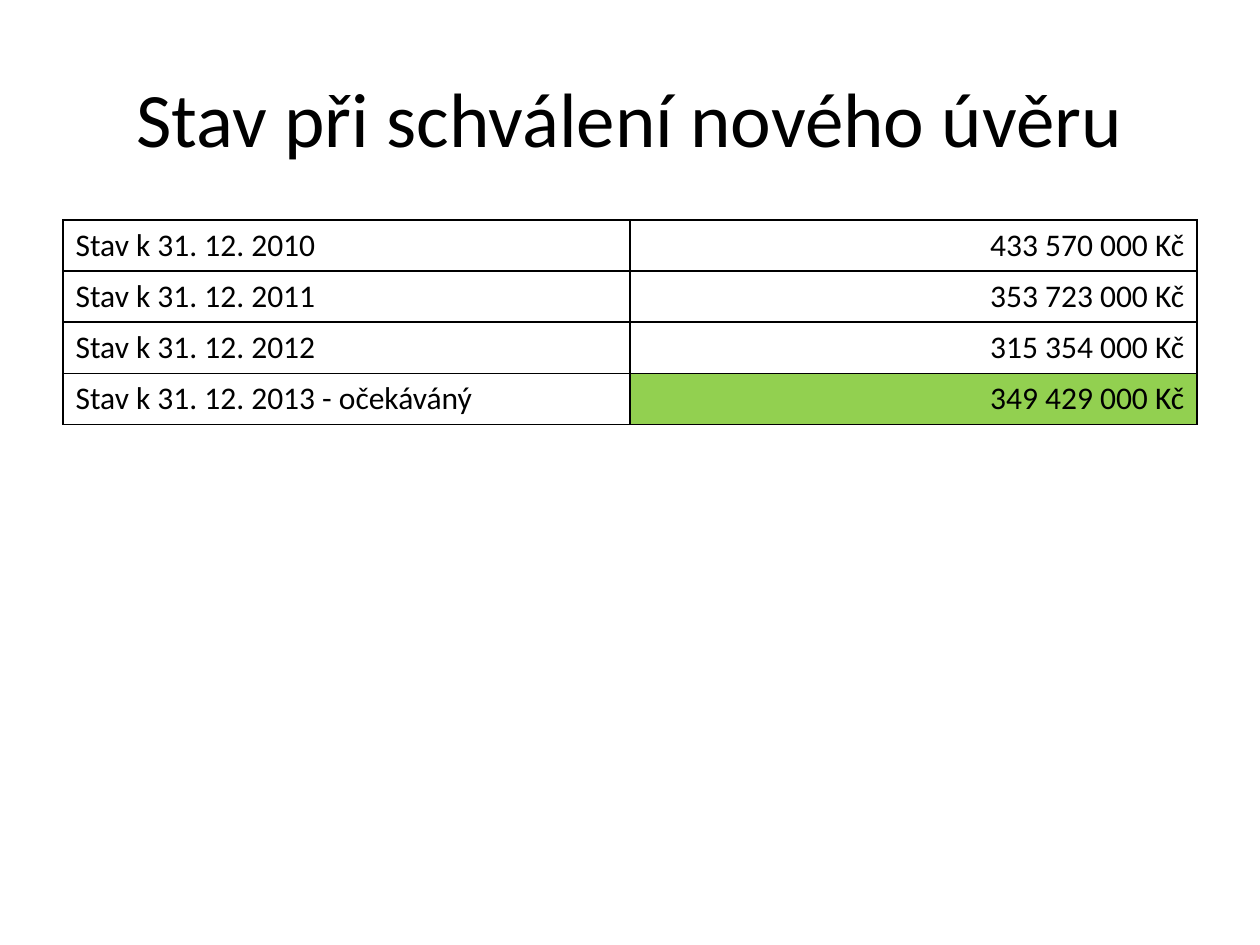
from lxml.etree import SubElement
from pptx import Presentation
from pptx.dml.color import RGBColor
from pptx.enum.text import MSO_ANCHOR, PP_ALIGN
from pptx.oxml.ns import qn
from pptx.util import Emu, Pt

PX = 914400 // 126
BLACK = RGBColor(0x00, 0x00, 0x00)
GREEN = RGBColor(0x92, 0xD0, 0x50)
FONT = "Calibri"

BALANCES = [
    ("Stav k 31. 12. 2010", "433 570 000 Kč"),
    ("Stav k 31. 12. 2011", "353 723 000 Kč"),
    ("Stav k 31. 12. 2012", "315 354 000 Kč"),
    ("Stav k 31. 12. 2013 - očekáváný", "349 429 000 Kč"),
]


def px(n):
    return Emu(n * PX)


def write_text(tf, text, size=18, color=BLACK, align=PP_ALIGN.LEFT):
    p = tf.paragraphs[0]
    p.alignment = align
    r = p.add_run()
    r.text = text
    r.font.name = FONT
    r.font.size = Pt(size)
    r.font.color.rgb = color


def set_borders(cell, color=BLACK, width=1):
    """Draw all four cell borders; call before the fill is set."""
    tc_pr = cell._tc.get_or_add_tcPr()
    for side in ("a:lnL", "a:lnR", "a:lnT", "a:lnB"):
        ln = SubElement(tc_pr, qn(side), w=str(Pt(width)))
        fill = SubElement(ln, qn("a:solidFill"))
        SubElement(fill, qn("a:srgbClr"), val=str(color))


def add_title(s, text):
    sp = s.shapes.title
    sp.left, sp.top, sp.width, sp.height = px(63), px(38), px(1134), px(158)
    tf = sp.text_frame
    tf.vertical_anchor = MSO_ANCHOR.MIDDLE
    write_text(tf, text, size=44, align=PP_ALIGN.CENTER)


def add_balance_table(s, balances):
    """Add dates and amounts, with the last amount highlighted."""
    row_height = px(51)
    table = s.shapes.add_table(len(balances), 2, px(63), px(220),
                               px(1134), row_height * len(balances)).table
    table.first_row = table.horz_banding = False
    for i, balance in enumerate(balances):
        table.rows[i].height = row_height
        for j, text in enumerate(balance):
            cell = table.cell(i, j)
            set_borders(cell)
            if j == 1 and i == len(balances) - 1:
                cell.fill.solid()
                cell.fill.fore_color.rgb = GREEN
            else:
                cell.fill.background()
            write_text(cell.text_frame, text,
                       align=PP_ALIGN.RIGHT if j else PP_ALIGN.LEFT)


def main():
    prs = Presentation()
    prs.slide_width, prs.slide_height = px(1260), px(945)
    s = prs.slides.add_slide(prs.slide_layouts[5])
    add_title(s, "Stav při schválení nového úvěru")
    add_balance_table(s, BALANCES)
    prs.save("out.pptx")


if __name__ == "__main__":
    main()
